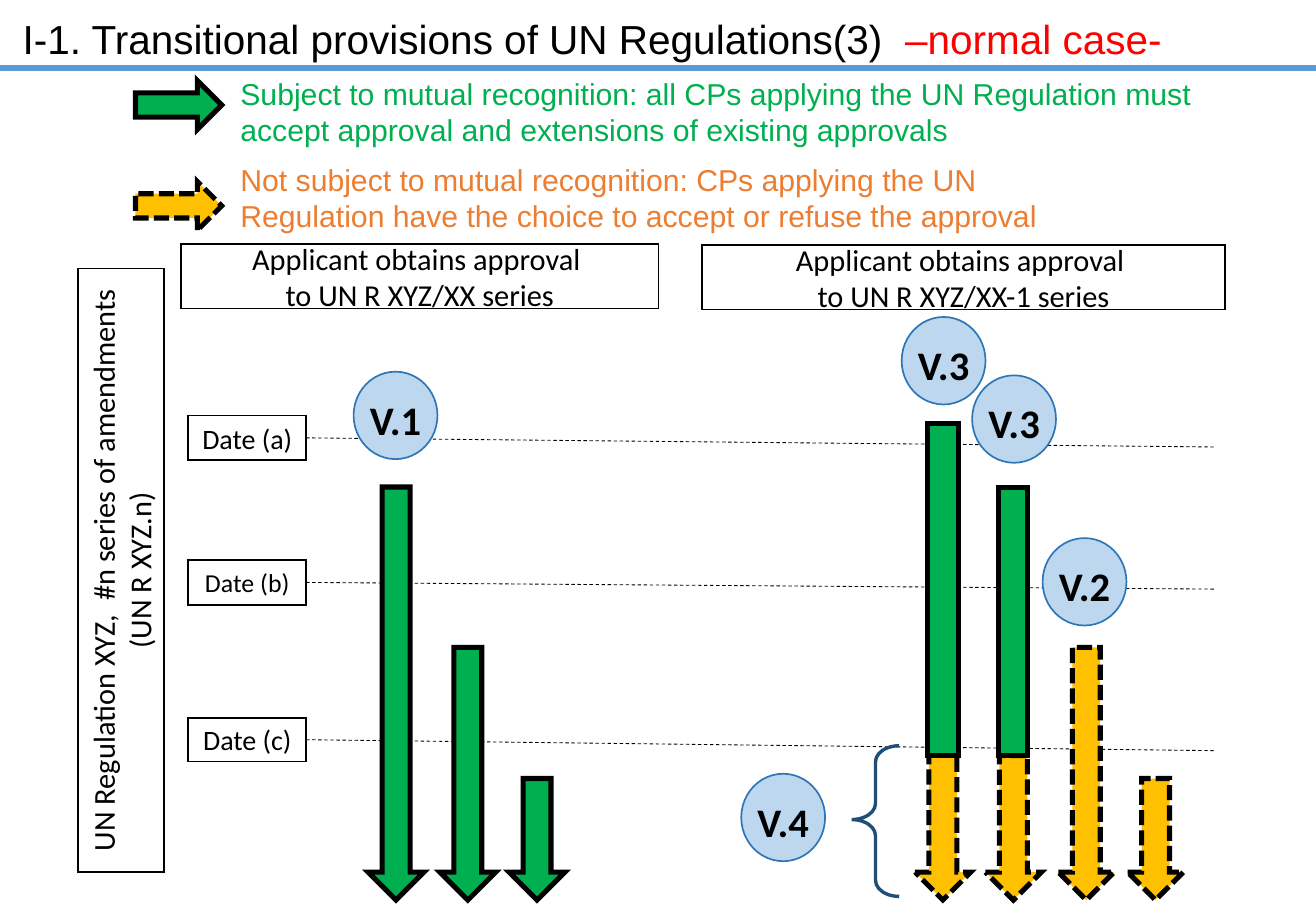
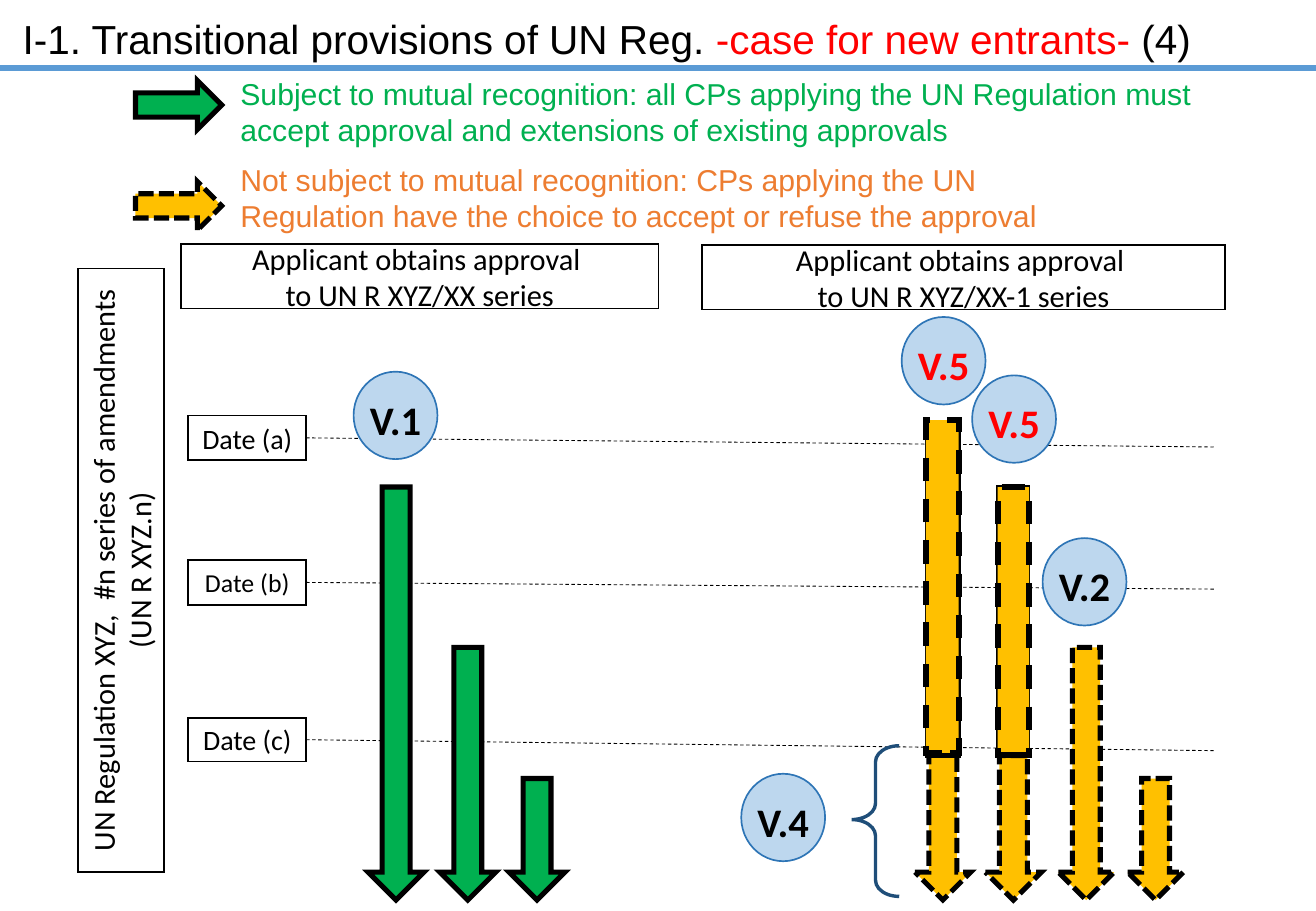
"""Build two slides on the transitional provisions of UN Regulations."""
import lxml.etree
import pptx
import pptx.dml.color
import pptx.enum.dml
import pptx.enum.shapes
import pptx.enum.text
import pptx.oxml.ns
import pptx.util

PX = 9144
BLACK, RED, GREEN, AMBER = "000000", "FF0000", "00B050", "FFC000"
ORANGE, BAND, DISC, DISC_EDGE, BRACE = "ED7D31", "5B9BD5", "BDD7EE", "2E75B6", "1F4E79"
SHAPE = pptx.enum.shapes.MSO_SHAPE
DASH = pptx.enum.dml.MSO_LINE.DASH
SHORT_DASH = pptx.enum.dml.MSO_LINE.SQUARE_DOT
CENTER = pptx.enum.text.PP_ALIGN.CENTER
LEFT = pptx.enum.text.PP_ALIGN.LEFT
MIDDLE = pptx.enum.text.MSO_ANCHOR.MIDDLE
TOP = pptx.enum.text.MSO_ANCHOR.TOP
qn = pptx.oxml.ns.qn


def paint(fill, colour):
    """Fill with a hex colour, or clear the fill for None."""
    if colour is None:
        fill.background()
    else:
        fill.solid()
        fill.fore_color.rgb = pptx.dml.color.RGBColor.from_string(colour)


def add(s, kind, box, fill=None, line=BLACK, width=1, dash=None, rotation=0,
        paragraphs=(), align=CENTER, frame=None):
    """Add a shape, or a text box when kind is None; runs are (text, font, colour)."""
    box = [v * PX for v in box]
    if kind is None:
        sp = s.shapes.add_textbox(*box)
    else:
        sp = s.shapes.add_shape(kind, *box)
        sp.shadow.inherit = False
        sp.rotation = rotation
        paint(sp.fill, fill)
        paint(sp.line.fill, line)
        sp.line.width = pptx.util.Pt(width)
        if dash:
            sp.line.dash_style = dash
        ln = sp._element.spPr.find(qn("a:ln"))
        lxml.etree.SubElement(ln, qn("a:miter"), lim="800000")
    tf = sp.text_frame
    base = {"word_wrap": True, "vertical_anchor": MIDDLE if kind else TOP}
    for name, value in {**base, **(frame or {})}.items():
        setattr(tf, name, value)
    for i, runs in enumerate(paragraphs):
        p = tf.add_paragraph() if i else tf.paragraphs[0]
        p.alignment = align
        for text, font, colour in runs:
            r = p.add_run()
            r.text = text
            for name, value in font.items():
                setattr(r.font, name, value)
            paint(r.font.fill, colour)
    return sp


BODY = {"name": "Calibri", "size": pptx.util.Pt(18)}
LEGEND = {"name": "Arial", "size": pptx.util.Pt(17.9)}
TITLE = {"name": "Arial", "size": pptx.util.Pt(24)}
TITLE_LEAD = {"name": "Arial", "size": pptx.util.Pt(28), "bold": True}
VERSION = {"name": "Calibri", "size": pptx.util.Pt(24), "bold": True}
VERSION_FRAME = {"word_wrap": False, "margin_left": 0, "margin_right": 0,
                 "margin_top": 6 * PX, "margin_bottom": 0}

HEADERS = [((149, 201, 393, 53), "to UN R XYZ/XX series"),
           ((578, 202, 430, 53), "to UN R XYZ/XX-1 series")]
DATES = [("Date (a)", 342, 37, 16.6, 368),
         ("Date (b)", 461, 37, 15.3, 485),
         ("Date (c)", 591, 36, 16.6, 618)]
ARROW_W, ARROW_BOTTOM = 46, 741
ARROWS = [(303, 401, GREEN), (362, 533, GREEN), (419, 641, GREEN),
          (753, 621, AMBER), (811, 622, AMBER), (871, 533, AMBER), (928, 641, AMBER)]
BARS = [(763, 349, 26, 273), (822, 401, 24, 221)]
KEYS = [(51, GREEN, None, (188, 57, 815, 70), GREEN,
         "Subject to mutual recognition: all CPs applying the UN Regulation must "
         "accept approval and extensions of existing approvals"),
        (134, AMBER, SHORT_DASH, (188, 128, 698, 70), ORANGE,
         "Not subject to mutual recognition: CPs applying the UN "
         "Regulation have the choice to accept or refuse the approval")]
DISCS = [(291, 306, "V.1"), (742, 261, None), (800, 309, None),
         (858, 443, "V.2"), (610, 637, "V.4")]
SLIDES = [
    {"title": [("I-1. Transitional provisions of UN Regulations(3)  ", BLACK),
               ("–normal case-", RED)],
     "version": ("V.3", BLACK), "dashed_bars": []},
    {"title": [("I-1. Transitional provisions of UN Reg. ", BLACK),
               ("-case for new entrants- ", RED), ("(4)", BLACK)],
     "version": ("V.5", RED),
     "dashed_bars": [(762, 346, 27, 274), (821, 401, 26, 221)]},
]

prs = pptx.Presentation()
prs.slide_width, prs.slide_height = 1083 * PX, 750 * PX

for content in SLIDES:
    s = prs.slides.add_slide(prs.slide_layouts[6])

    rules = []
    for label, top, height, size, end_y in DATES:
        font = {**BODY, "size": pptx.util.Pt(size)}
        sp = add(s, SHAPE.RECTANGLE, (155, top, 97, height),
                 paragraphs=[[(label, font, BLACK)]])
        rules.append((sp, (252, top + height // 2, 999, end_y), BLACK, 0.5, DASH))
    rules.append((None, (0, 56, 1083, 56), BAND, 3, None))
    for start, ends, colour, width, dash in rules:
        cxn = s.shapes.add_connector(pptx.enum.shapes.MSO_CONNECTOR.STRAIGHT,
                                     *[v * PX for v in ends])
        if start is not None:
            cxn.begin_connect(start, 3)
        paint(cxn.line.fill, colour)
        cxn.line.width = pptx.util.Pt(width)
        if dash:
            cxn.line.dash_style = dash
        lxml.etree.SubElement(cxn._element.spPr, qn("a:effectLst"))

    add(s, SHAPE.RECTANGLE, (-149, 434, 497, 71), rotation=270, paragraphs=[
        [("UN Regulation XYZ,  #n series of amendments (UN R XYZ.n)", BODY, BLACK)]])
    for box, series in HEADERS:
        add(s, SHAPE.RECTANGLE, box, paragraphs=[
            [("Applicant obtains approval ", BODY, BLACK)], [(series, BODY, BLACK)]])

    for left, top, colour in ARROWS:
        add(s, SHAPE.DOWN_ARROW, (left, top, ARROW_W, ARROW_BOTTOM - top), colour,
            width=3, dash=SHORT_DASH if colour == AMBER else None)
    for box in BARS:
        add(s, SHAPE.RECTANGLE, box, GREEN, width=3)

    for top, colour, dash, box, text_colour, text in KEYS:
        add(s, SHAPE.DOWN_ARROW, (127, top, 40, 71), colour, width=3, dash=dash,
            rotation=270)
        add(s, None, box, paragraphs=[[(text, LEGEND, text_colour)]], align=LEFT)

    for left, top, label in DISCS:
        text, colour = (label, BLACK) if label else content["version"]
        add(s, SHAPE.OVAL, (left, top, 69, 72), DISC, DISC_EDGE,
            paragraphs=[[(text, VERSION, colour)]], frame=VERSION_FRAME)

    brace = add(s, SHAPE.LEFT_BRACE, (701, 614, 39, 124), line=BRACE, width=2)
    brace.adjustments[0], brace.adjustments[1] = 0.34, 0.49

    title = [(" ", TITLE_LEAD, BLACK)]
    title += [(text, TITLE, colour) for text, colour in content["title"]]
    add(s, None, (-2, 1, 1063, 57), paragraphs=[title], align=LEFT)

    for box in content["dashed_bars"]:
        add(s, SHAPE.RECTANGLE, box, AMBER, width=3.5, dash=DASH)

prs.save("out.pptx")
